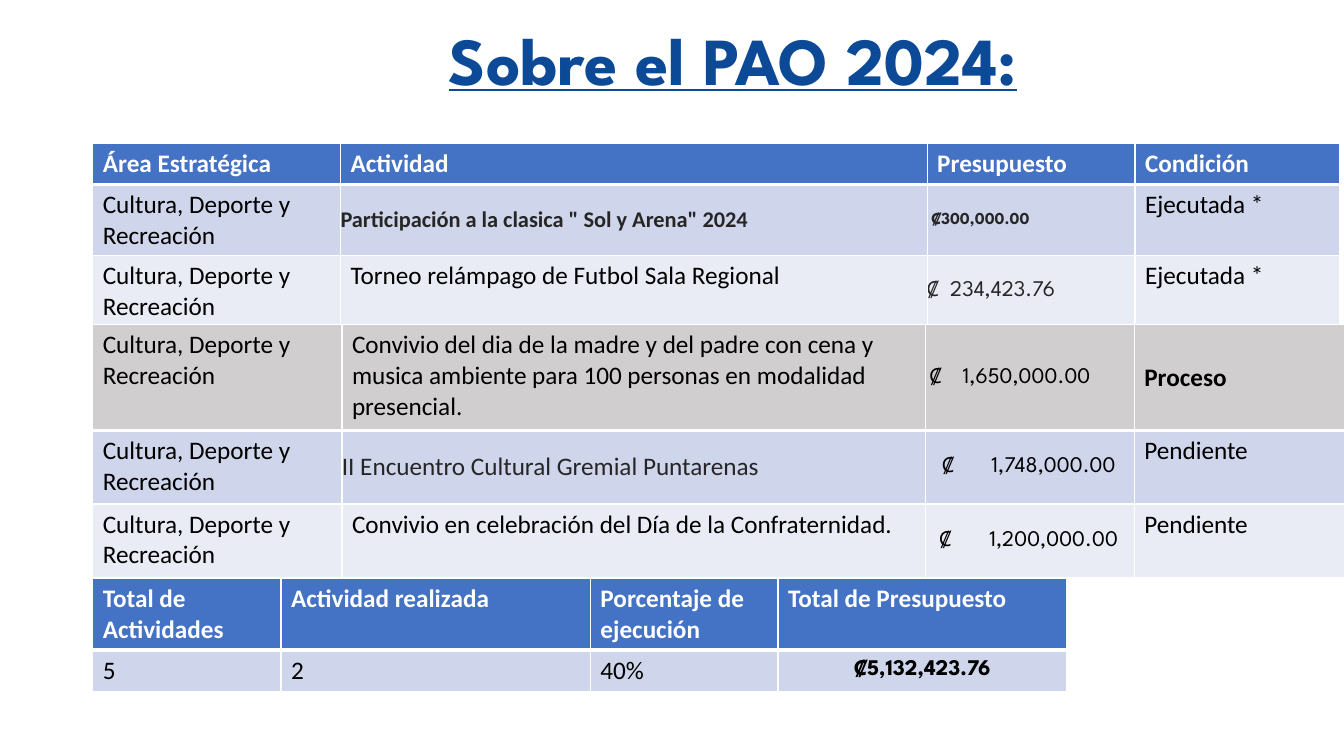
from dataclasses import dataclass

from lxml.etree import SubElement
from pptx import Presentation
from pptx.dml.color import RGBColor
from pptx.enum.text import MSO_ANCHOR, PP_ALIGN
from pptx.oxml.ns import qn
from pptx.util import Pt

BLUE, GRAY, BAND, PALE = "4472C4", "D0CECE", "CFD5EA", "E9EBF5"
WHITE, BLACK, DARK = "FFFFFF", "000000", "262626"
LEFT = 66.25
AREA = "Cultura, Deporte y Recreación"


@dataclass
class Entry:
    """Text of one cell; flush drops the insets, lead and gap place an amount."""
    text: str
    size: float = 18
    face: str = "Calibri"
    color: str = BLACK
    bold: bool = False
    middle: bool = False
    flush: bool = False
    lead: float = 0
    gap: float = 0
    center: bool = False


def rgb(code):
    """Turn a hex string into a colour."""
    return RGBColor.from_string(code)


def style(para, size, face, color, bold):
    """Set the font of a whole paragraph."""
    font = para.font
    font.size, font.name, font.bold = Pt(size), face, bold
    font.color.rgb = rgb(color)


def flush(text, **more):
    """Make an entry without insets, centred in height."""
    return Entry(text, flush=True, middle=True, **more)


def money(text, lead=0, gap=0, size=16, **more):
    """Make an amount whose figure stands at a tab after the sign."""
    return flush(text, lead=lead, gap=gap, size=size, face="League Spartan", **more)


def head(*names):
    """Make a row of white bold headings."""
    return BLUE, [Entry(name, color=WHITE, bold=True) for name in names]


def border(cell, top, bottom):
    """Draw white lines round a cell."""
    props = cell._tc.get_or_add_tcPr()
    for side, width in (("L", 1), ("R", 1), ("T", top), ("B", bottom)):
        line = SubElement(props, qn("a:ln" + side), w=str(Pt(width)))
        paint = SubElement(line, qn("a:solidFill"))
        SubElement(paint, qn("a:srgbClr"), val=WHITE)


def tab(para, place):
    """Add a left tab stop to a paragraph."""
    stops = SubElement(para._p.get_or_add_pPr(), qn("a:tabLst"))
    SubElement(stops, qn("a:tab"), pos=str(Pt(place)), algn="l")


def write(cell, entry):
    """Put an entry into a cell."""
    cell.text = entry.text
    para = cell.text_frame.paragraphs[0]
    if entry.gap:
        tab(para, entry.gap)
    style(para, entry.size, entry.face, entry.color, entry.bold)
    if entry.center:
        para.alignment = PP_ALIGN.CENTER
    if entry.middle:
        cell.vertical_anchor = MSO_ANCHOR.MIDDLE
    if entry.flush:
        cell.margin_left = Pt(entry.lead)
        cell.margin_right = cell.margin_top = cell.margin_bottom = 0


def grid(slide, top, widths, heights, rows):
    """Add a table with a heavy line below its first row."""
    frame = slide.shapes.add_table(len(heights), len(widths), Pt(LEFT), Pt(top),
                                   Pt(sum(widths)), Pt(sum(heights)))
    table = frame.table
    table.horz_banding = False
    for col, width in zip(table.columns, widths):
        col.width = Pt(width)
    for i, (height, (fill, items)) in enumerate(zip(heights, rows)):
        table.rows[i].height = Pt(height)
        for j, item in enumerate(items):
            cell = table.cell(i, j)
            border(cell, 3 if i == 1 else 1, 3 if i == 0 else 1)
            cell.fill.solid()
            cell.fill.fore_color.rgb = rgb(fill)
            write(cell, item if isinstance(item, Entry) else Entry(item))


def title(slide, text):
    """Add the underlined slide title."""
    box = slide.shapes.add_textbox(Pt(163.5), Pt(14.5), Pt(720), Pt(60.5))
    frame = box.text_frame
    frame.word_wrap = True
    frame.vertical_anchor = MSO_ANCHOR.BOTTOM
    para = frame.paragraphs[0]
    para.text = text
    para.alignment = PP_ALIGN.CENTER
    para.line_spacing = 0.9
    style(para, 48, "League Spartan", "0C4A97", True)
    para.font.underline = True


def main():
    """Build the slide and save it."""
    deck = Presentation()
    deck.slide_width, deck.slide_height = Pt(960), Pt(540)
    slide = deck.slides.add_slide(deck.slide_layouts[6])
    title(slide, "Sobre el PAO 2024:")
    grid(slide, 102.25, [177, 419, 148.5, 146], [29.5, 51, 49.5], [
        head("Área Estratégica", "Actividad", "Presupuesto", "Condición"),
        (BAND, [AREA,
                flush('Participación a la clasica " Sol y Arena" 2024',
                      size=16, color=DARK, bold=True),
                money("₡300,000.00", 3, size=12, color=DARK, bold=True),
                "Ejecutada *"]),
        (PALE, [AREA, "Torneo relámpago de Futbol Sala Regional",
                money("₡\t234,423.76", 0, 16.5, color=DARK), "Ejecutada *"]),
    ])
    grid(slide, 232, [178, 417, 149, 150.5], [75.5, 52.5, 52.5], [
        (GRAY, [AREA, "Convivio del dia de la madre y del padre con cena y musica "
                "ambiente para 100 personas en modalidad presencial.",
                money("₡\t1,650,000.00", 3, 23.5),
                Entry("Proceso", bold=True, middle=True)]),
        (BAND, [AREA, flush("II Encuentro Cultural Gremial Puntarenas", color=DARK),
                money("₡\t1,748,000.00", 12, 35), "Pendiente"]),
        (PALE, [AREA, "Convivio en celebración del Día de la Confraternidad.",
                money("₡\t1,200,000.00", 10, 35.5), "Pendiente"]),
    ])
    grid(slide, 413.25, [134.5, 221, 134, 206.5], [51, 29.5], [
        head("Total de Actividades", "Actividad realizada",
             "Porcentaje de ejecución", "Total de Presupuesto"),
        (BAND, ["5", "2", "40%", money("₡5,132,423.76", bold=True, center=True)]),
    ])
    deck.save("out.pptx")


if __name__ == "__main__":
    main()
